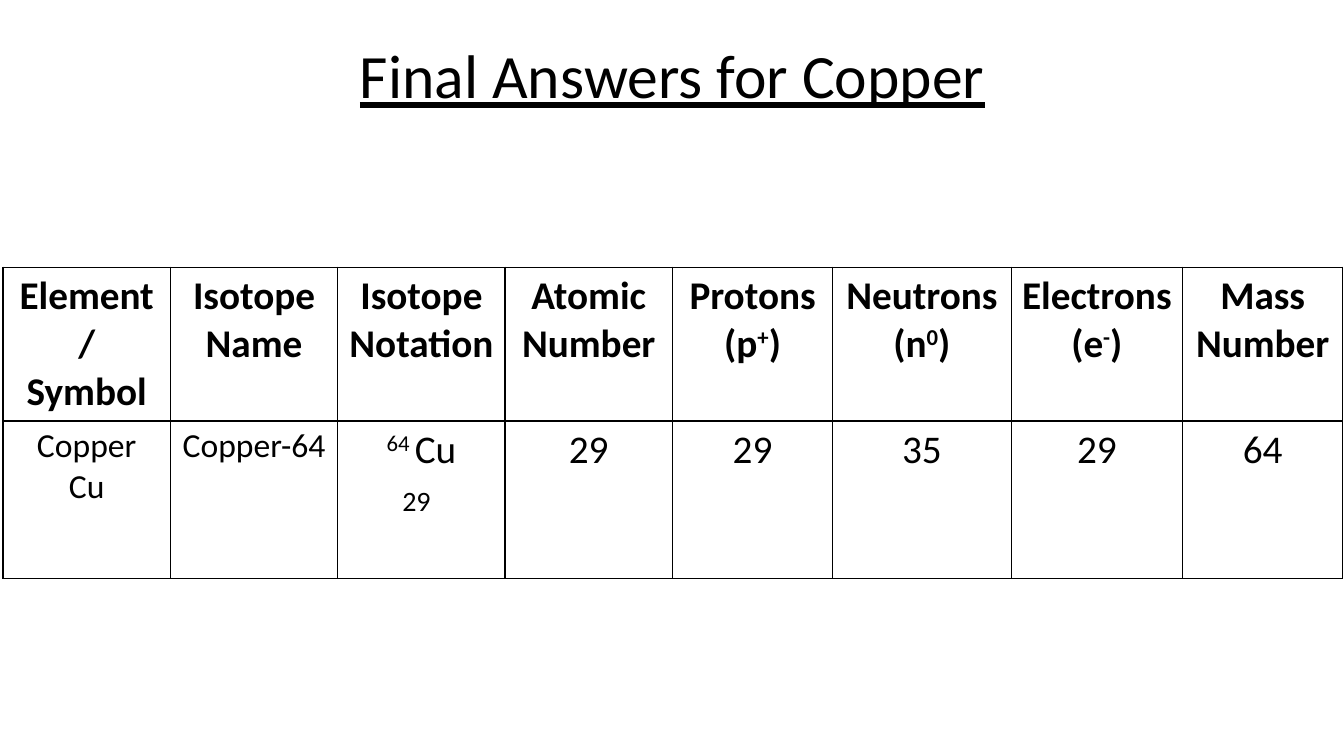
from dataclasses import dataclass

from lxml.etree import SubElement
from pptx import Presentation
from pptx.dml.color import RGBColor
from pptx.enum.text import MSO_ANCHOR, PP_ALIGN
from pptx.oxml.ns import qn
from pptx.util import Inches, Pt


@dataclass(frozen=True)
class Theme:
    """Colours, font and type sizes of the slide."""
    ink: str = "000000"
    paper: str = "FFFFFF"
    font: str = "Calibri"
    title: int = 44
    head: int = 28
    name: int = 24
    small: int = 20
    rule: int = 1


THEME = Theme()
WIDTHS = [1.66, 1.66, 1.66, 1.66, 1.59, 1.77, 1.7, 1.59]
HEIGHTS = [1.51, 1.56]
HEADS = [
    ["Element/", "Symbol"], ["Isotope Name"], ["Isotope Notation"],
    ["Atomic Number"], ["Protons", "(p^+^)"], ["Neutrons", "(n^0^)"],
    ["Electrons", "(e^-^)"], ["Mass Number"],
]
VALUES = [
    ["Copper", "Cu"], ["Copper-64"], ["^64 ^Cu", "29"],
    ["29"], ["29"], ["35"], ["29"], ["64"],
]


def add_run(para, text, size, bold=False, raised=False):
    """Add one styled run to a paragraph."""
    run = para.add_run()
    run.text = text
    font = run.font
    font.name, font.size, font.bold = THEME.font, Pt(size), bold
    font.color.rgb = RGBColor.from_string(THEME.ink)
    if raised:
        font._element.set("baseline", "30000")
    return run


def fill_text(frame, lines, size, bold=False):
    """Write centred lines, raising the text between carets."""
    for index, line in enumerate(lines):
        para = frame.paragraphs[0] if index == 0 else frame.add_paragraph()
        para.alignment = PP_ALIGN.CENTER
        for turn, part in enumerate(line.split("^")):
            if part:
                add_run(para, part, size, bold, turn % 2 == 1)


def rule_cell(cell):
    """Give a cell a plain fill and a thin rule on each side."""
    cell.fill.solid()
    cell.fill.fore_color.rgb = RGBColor.from_string(THEME.paper)
    props = cell._tc.get_or_add_tcPr()
    for index, side in enumerate(("lnL", "lnR", "lnT", "lnB")):
        line = SubElement(props, qn(f"a:{side}"), w=str(Pt(THEME.rule)))
        fill = SubElement(line, qn("a:solidFill"))
        SubElement(fill, qn("a:srgbClr"), val=THEME.ink)
        props.insert(index, line)


def set_low(para):
    """Set the atomic number small beneath the symbol."""
    para.alignment = PP_ALIGN.LEFT
    para.space_before = Pt(8)
    para._p.get_or_add_pPr().set("marL", str(Inches(0.54)))
    para.runs[0].font.size = Pt(THEME.small)


def add_grid(slide, left, top, width, height):
    """Draw the table of answers in the given box."""
    table = slide.shapes.add_table(
        2, len(WIDTHS), Inches(left), Inches(top), Inches(width), Inches(height)
    ).table
    table.first_row = table.horz_banding = False
    for col, share in zip(table.columns, WIDTHS):
        col.width = Inches(width * share / sum(WIDTHS))
    for row, share in zip(table.rows, HEIGHTS):
        row.height = Inches(height * share / sum(HEIGHTS))
    for down, texts in enumerate((HEADS, VALUES)):
        for across, lines in enumerate(texts):
            cell = table.cell(down, across)
            size = THEME.name if down and across < 2 else THEME.head
            fill_text(cell.text_frame, lines, size, down == 0)
            rule_cell(cell)
    set_low(table.cell(1, 2).text_frame.paragraphs[1])


def add_title(slide, left, top, width, height):
    """Draw the underlined title at the top of the given box."""
    box = slide.shapes.add_textbox(
        Inches(left), Inches(top), Inches(width), Inches(height)
    )
    frame = box.text_frame
    frame.word_wrap = True
    frame.vertical_anchor = MSO_ANCHOR.TOP
    fill_text(frame, ["Final Answers for Copper"], THEME.title)
    para = frame.paragraphs[0]
    para.line_spacing = 0.9
    para.runs[0].font.underline = True


def main():
    """Build the slide and save it."""
    deck = Presentation()
    deck.slide_width, deck.slide_height = Inches(13.33), Inches(7.5)
    slide = deck.slides.add_slide(deck.slide_layouts[6])
    add_grid(slide, 0.03, 2.65, sum(WIDTHS), sum(HEIGHTS))
    add_title(slide, 0.92, 0.4, 11.5, 1.45)
    deck.save("out.pptx")


if __name__ == "__main__":
    main()
